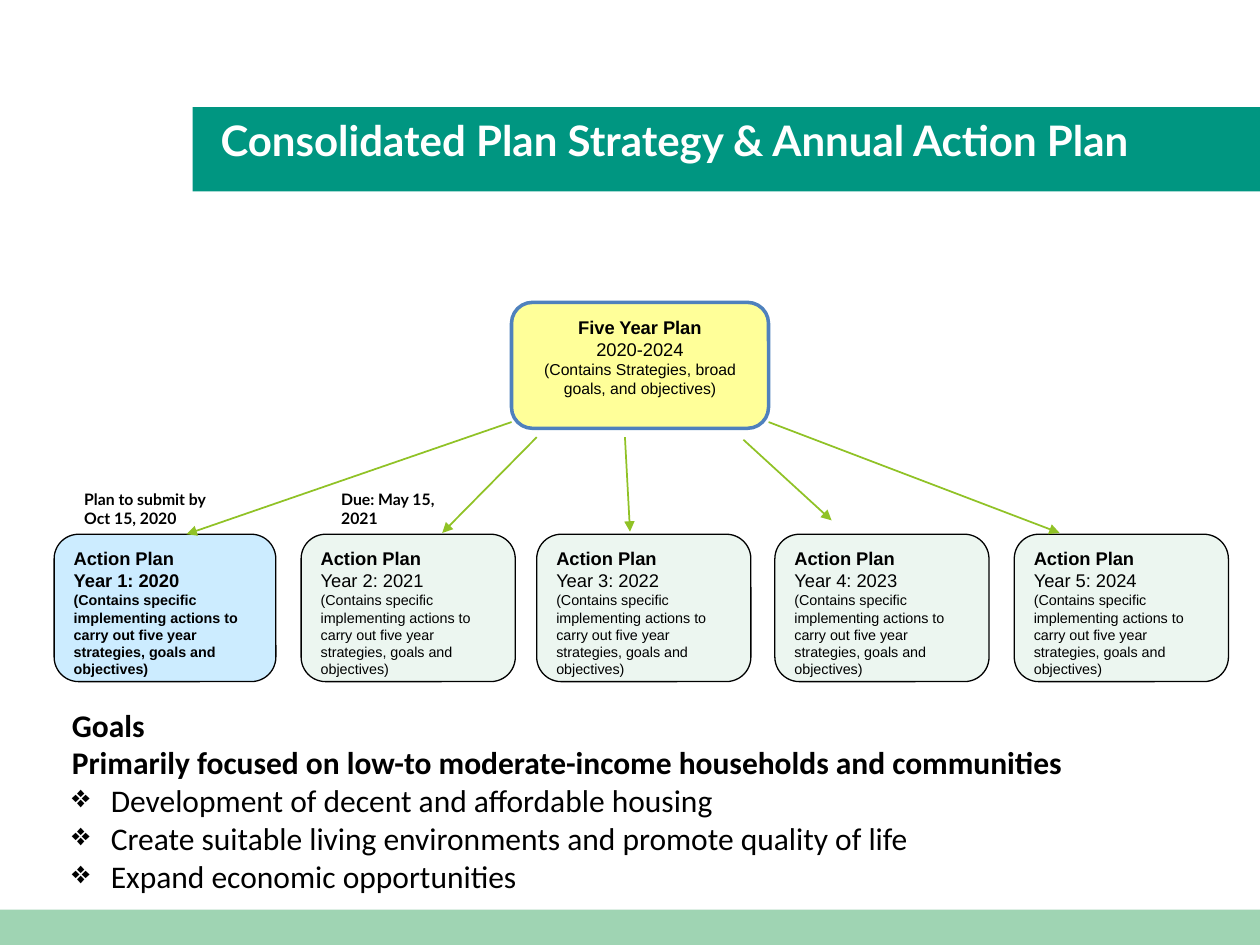
from dataclasses import dataclass

import lxml.etree
import pptx
import pptx.dml.color
import pptx.enum.shapes
import pptx.enum.text
import pptx.oxml.ns
import pptx.util

Inches = pptx.util.Inches
Pt = pptx.util.Pt
SHAPE = pptx.enum.shapes.MSO_SHAPE
ALIGN = pptx.enum.text.PP_ALIGN
ANCHOR = pptx.enum.text.MSO_ANCHOR
qn = pptx.oxml.ns.qn


@dataclass(frozen=True)
class Theme:
    title_band: str = "009681"
    footer_band: str = "9FD4B3"
    plan_fill: str = "FFFF99"
    plan_line: str = "4F81BD"
    current_fill: str = "CCECFF"
    year_fill: str = "ECF6F0"
    arrow: str = "90C226"
    ink: str = "000000"
    white: str = "FFFFFF"
    title_font: str = "Lato"
    box_font: str = "Arial"
    goals_font: str = "Calibri"
    title_size: float = 24
    goals_size: float = 18
    head_size: float = 10.5
    note_size: float = 9
    detail_size: float = 8.2


THEME = Theme()


def rgb(color):
    return pptx.dml.color.RGBColor.from_string(color)


def style(p, font, size, bold=False, color=THEME.ink):
    p.font.name, p.font.size, p.font.bold = font, Pt(size), bold
    p.font.color.rgb = rgb(color)


def set_margins(tf, x, y):
    tf.margin_left = tf.margin_right = Inches(x)
    tf.margin_top = tf.margin_bottom = Inches(y)


def write(tf, lines, font, align=ALIGN.LEFT):
    """Fill a frame with (text, size, bold) lines."""
    tf.word_wrap = True
    tf.vertical_anchor = ANCHOR.TOP
    for i, (text, size, bold) in enumerate(lines):
        p = tf.add_paragraph() if i else tf.paragraphs[0]
        p.text, p.alignment = text, align
        style(p, font, size, bold)


def add_box(s, kind, box, fill, line=None, width=0.75):
    sp = s.shapes.add_shape(kind, *map(Inches, box))
    sp.shadow.inherit = False
    sp.fill.solid()
    sp.fill.fore_color.rgb = rgb(fill)
    if line:
        sp.line.color.rgb = rgb(line)
        sp.line.width = Pt(width)
    else:
        sp.line.fill.background()
    return sp


def add_title(s, band, box):
    title = s.shapes.title
    title.element.addprevious(add_box(s, SHAPE.RECTANGLE, band, THEME.title_band).element)
    title.left, title.top, title.width, title.height = map(Inches, box)
    tf = title.text_frame
    set_margins(tf, 0, 0)
    tf.auto_size = pptx.enum.text.MSO_AUTO_SIZE.NONE
    tf.vertical_anchor = ANCHOR.TOP
    p = tf.paragraphs[0]
    p.text = "Consolidated Plan Strategy & Annual Action Plan"
    p.alignment, p.line_spacing = ALIGN.LEFT, Pt(23.5)
    style(p, THEME.title_font, THEME.title_size, True, THEME.white)


def add_five_year_plan(s, box):
    sp = add_box(s, SHAPE.ROUNDED_RECTANGLE, box, THEME.plan_fill, THEME.plan_line, 2)
    set_margins(sp.text_frame, 0.07, 0.06)
    write(sp.text_frame, [
        ("Five Year Plan", THEME.head_size, True),
        ("2020-2024", THEME.head_size, False),
        ("(Contains Strategies, broad goals, and objectives)", THEME.note_size, False),
    ], THEME.box_font, ALIGN.CENTER)


def add_year_plan(s, box, number, current):
    fill = THEME.current_fill if current else THEME.year_fill
    sp = add_box(s, SHAPE.ROUNDED_RECTANGLE, box, fill, THEME.ink)
    write(sp.text_frame, [
        ("Action Plan", THEME.head_size, True),
        (f"Year {number}: {2019 + number}", THEME.head_size, current),
        ("(Contains specific implementing actions to carry out five year "
         "strategies, goals and objectives)", THEME.detail_size, current),
    ], THEME.box_font)


def add_arrow(s, start, end):
    line = s.shapes.add_connector(pptx.enum.shapes.MSO_CONNECTOR.STRAIGHT,
                                  *map(Inches, start + end))
    line.line.color.rgb = rgb(THEME.arrow)
    line.line.width = Pt(1)
    lxml.etree.SubElement(line.line._get_or_add_ln(), qn("a:tailEnd"), type="triangle")
    lxml.etree.SubElement(line.element.spPr, qn("a:effectLst"))


def add_due_note(s, box, text):
    sp = s.shapes.add_textbox(*map(Inches, box))
    write(sp.text_frame, [(text, THEME.note_size, True)], THEME.title_font)


def add_goals(s, box):
    headings = ["Goals",
                "Primarily focused on low-to moderate-income households and communities"]
    goals = ["Development of decent and affordable housing",
             "Create suitable living environments and promote quality of life",
             "Expand economic opportunities"]
    tf = s.shapes.add_textbox(*map(Inches, box)).text_frame
    set_margins(tf, 0, 0)
    write(tf, [(text, THEME.goals_size, text in headings) for text in headings + goals],
          THEME.goals_font)
    for p in tf.paragraphs[len(headings):]:
        pPr = p._p.get_or_add_pPr()
        pPr.set("marL", str(Inches(0.31)))
        pPr.set("indent", str(-Inches(0.31)))
        bullet = lxml.etree.Element(qn("a:buChar"), char="❖")
        pPr.insert(0, bullet)


def add_plan_tree(s, top):
    """Place the five-year plan at top, with the yearly plans and arrows below."""
    add_five_year_plan(s, (4.06, top, 2.04, 1))
    row = top + 1.84
    columns = [(0.43, 1.76), (2.39, 1.7), (4.26, 1.7), (6.15, 1.7), (8.05, 1.7)]
    for number, (left, width) in enumerate(columns, 1):
        add_year_plan(s, (left, row, width, 1.17), number, number == 1)
    arrows = [((4.06, 0.95), (1.48, 1.84)), ((4.26, 1.07), (3.51, 1.83)),
              ((4.96, 1.07), (5, 1.82)), ((5.9, 1.09), (6.6, 1.73)),
              ((6.1, 0.95), (8.41, 1.83))]
    for (x1, y1), (x2, y2) in arrows:
        add_arrow(s, (x1, top + y1), (x2, top + y2))
    for left, text in [(0.57, "Plan to submit by Oct 15, 2020"), (2.61, "Due: May 15, 2021")]:
        add_due_note(s, (left, row - 0.4, 1.23, 0.4), text)


def main():
    prs = pptx.Presentation()
    prs.slide_width, prs.slide_height = Inches(10), Inches(7.5)
    s = prs.slides.add_slide(prs.slide_layouts[5])
    add_title(s, (1.53, 0.85, 8.47, 0.67), (1.75, 0.98, 8.25, 0.32))
    add_box(s, SHAPE.RECTANGLE, (0, 7.22, 10, 0.28), THEME.footer_band)
    add_plan_tree(s, 2.4)
    add_goals(s, (0.57, 5.6, 8.87, 1.51))
    prs.save("out.pptx")


if __name__ == "__main__":
    main()
